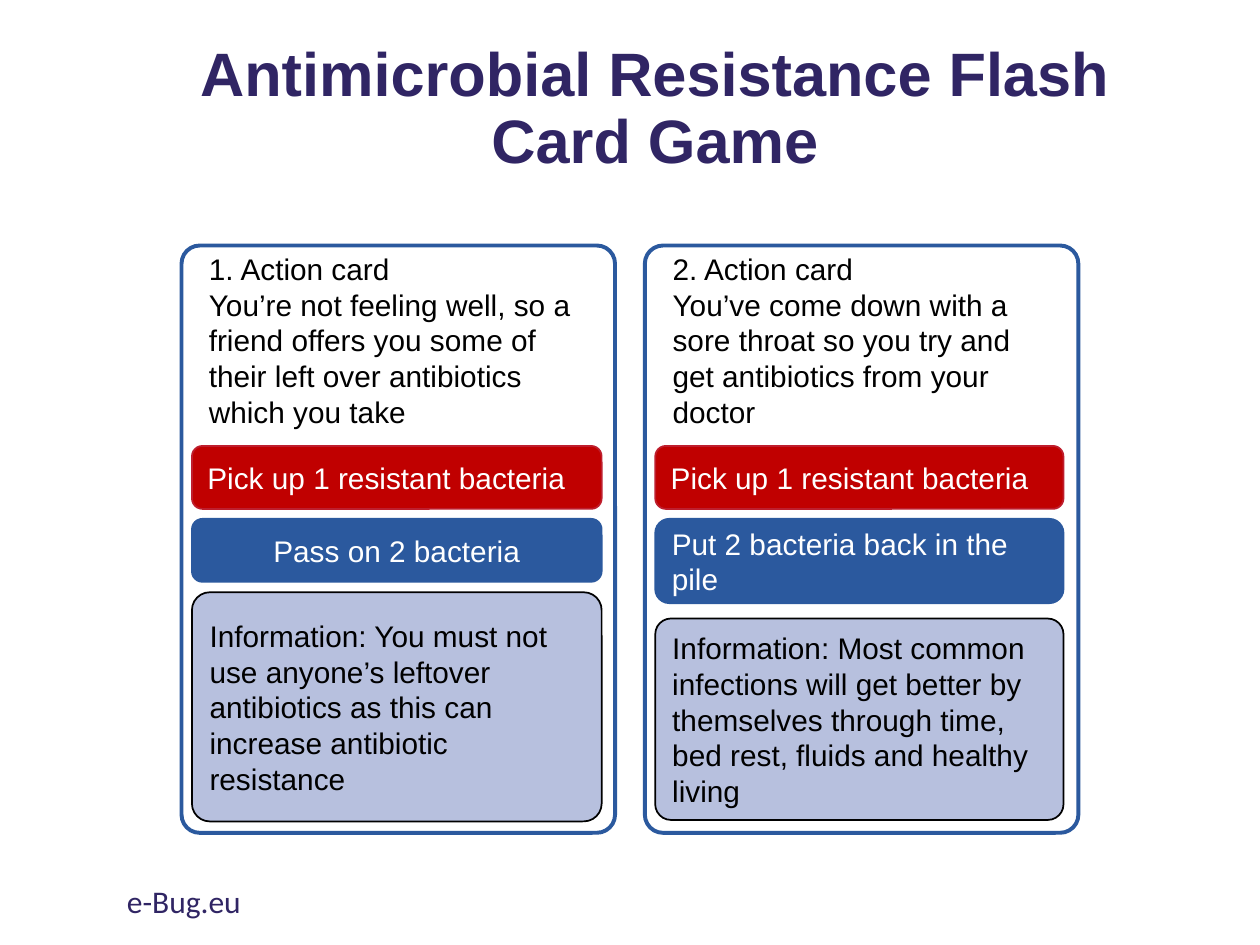
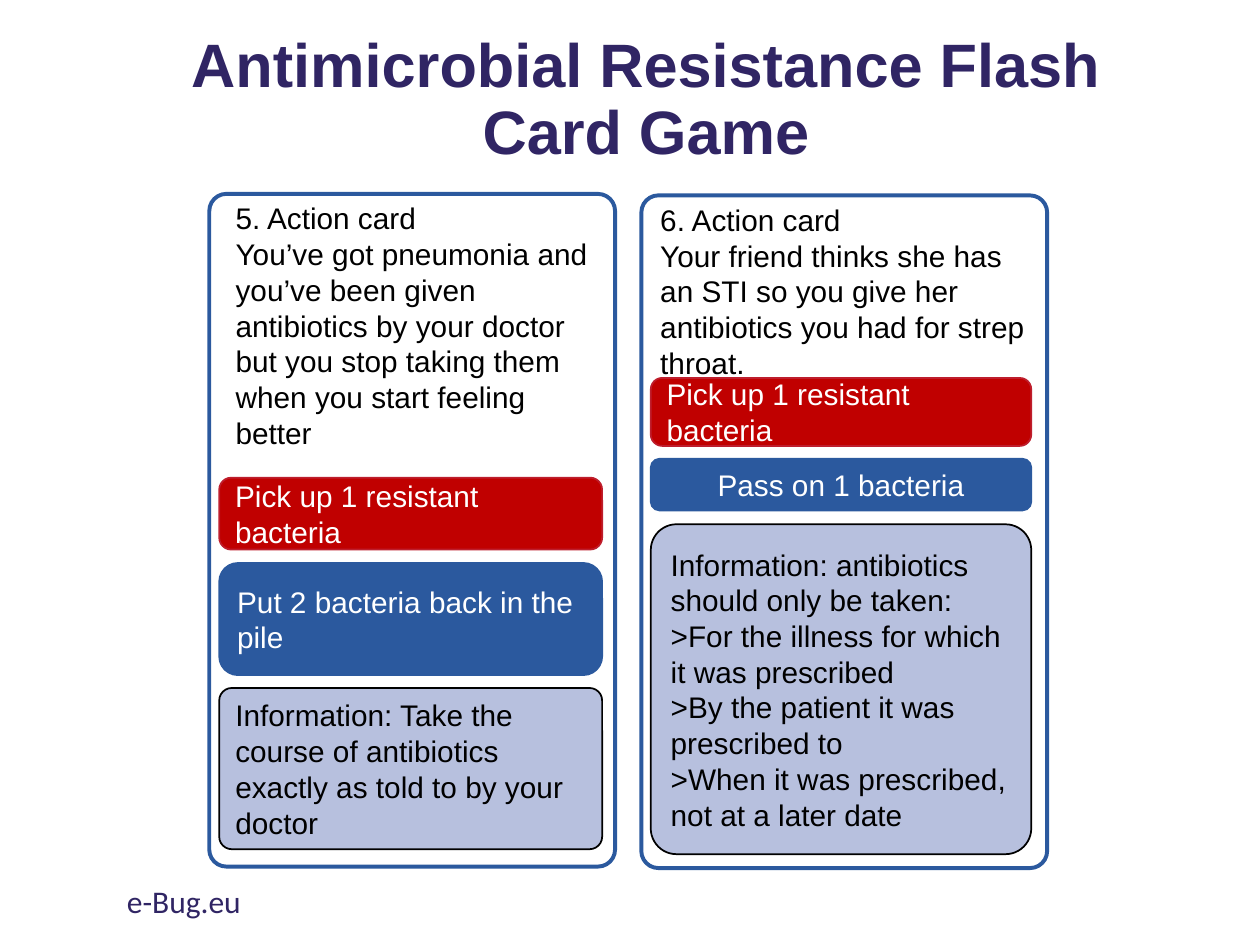
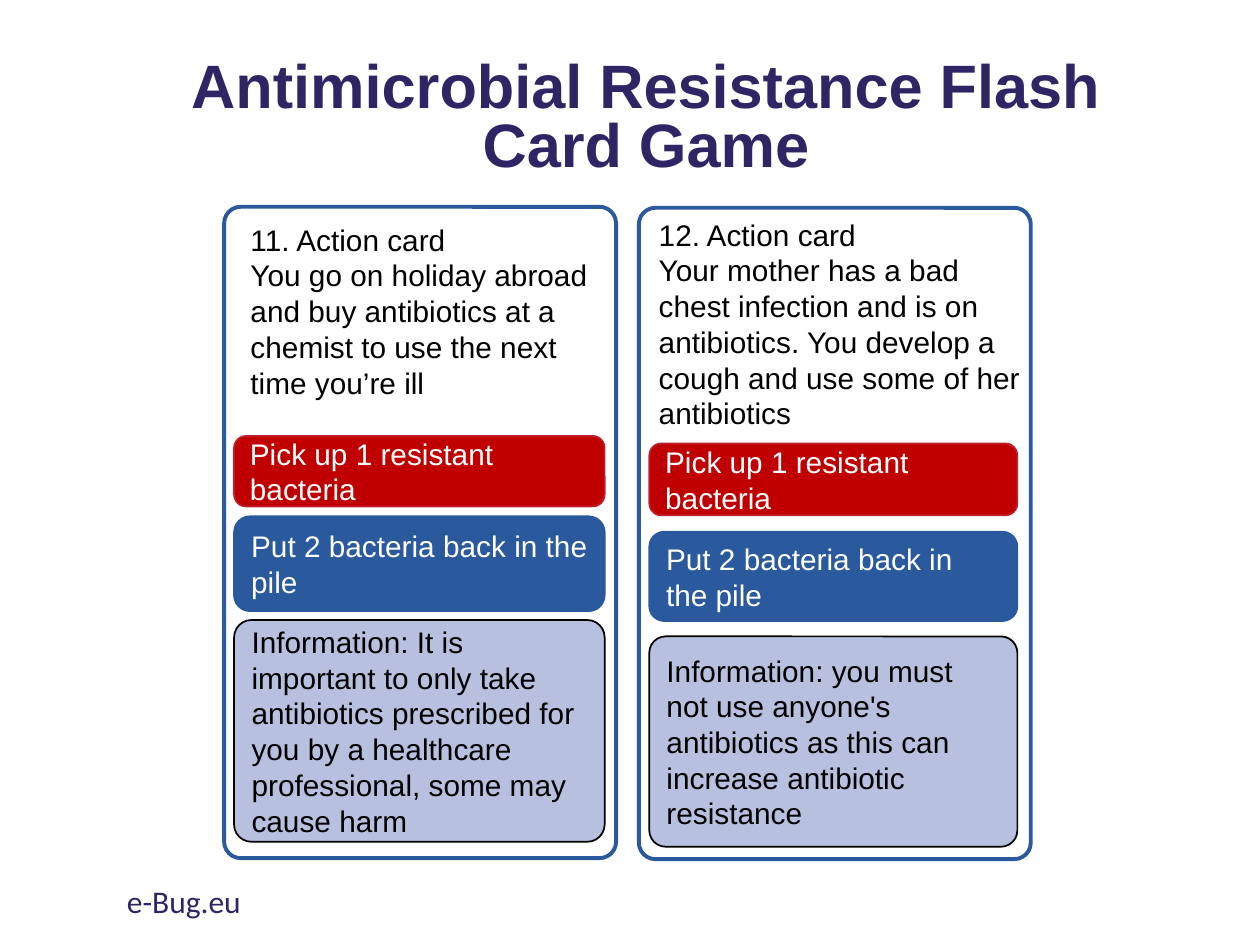
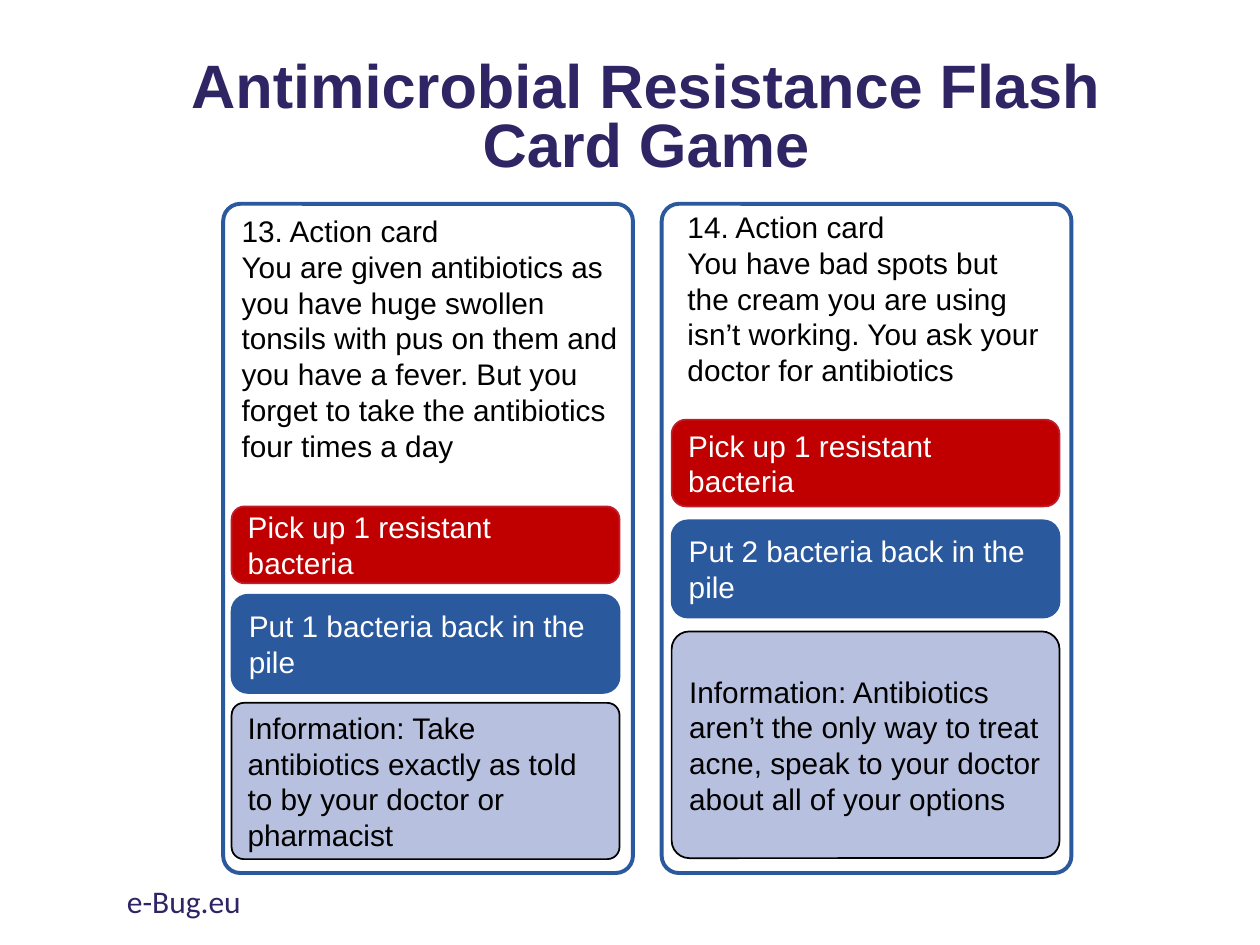
from dataclasses import dataclass

import pptx
import pptx.dml.color
import pptx.enum.shapes
import pptx.enum.text
import pptx.oxml
import pptx.oxml.ns
import pptx.util
from lxml import etree

Cm = pptx.util.Cm
Pt = pptx.util.Pt
RGBColor = pptx.dml.color.RGBColor
Align = pptx.enum.text.PP_ALIGN
Anchor = pptx.enum.text.MSO_ANCHOR
AutoSize = pptx.enum.text.MSO_AUTO_SIZE

INDIGO = RGBColor(0x30, 0x25, 0x64)
BLUE = RGBColor(0x2B, 0x59, 0x9E)
RED = RGBColor(0xC0, 0x00, 0x00)
RED_EDGE = RGBColor(0xBE, 0x1E, 0x2D)
LAVENDER = RGBColor(0xB7, 0xC0, 0xDE)
BLACK = RGBColor(0x00, 0x00, 0x00)
WHITE = RGBColor(0xFF, 0xFF, 0xFF)

TITLE = "Antimicrobial Resistance Flash Card Game"
FOOTER = "e-Bug.eu"
PICK_UP = "Pick up 1 resistant bacteria"
FRAME_CORNER = 0.042
INFO_CORNER = 0.078
BAND_CORNER = 0.167


@dataclass
class Card:
    """One flash card; all lengths are centimetres."""
    corner: tuple       # left, top of the frame
    prompt_box: tuple   # left, top, width, height
    band_span: tuple    # left, width shared by the three bands
    pick_up: tuple      # top, height of each band
    action: tuple
    info: tuple
    heading: str
    prompt: str
    action_text: str
    info_lines: tuple
    auto_numbered: bool = False


@dataclass
class CardSlide:
    title_box: tuple
    title_spacing: float
    card_size: tuple
    cards: tuple


SLIDES = (
    CardSlide((2.26, 0.38, 21.89, 3.68), 0.9, (8.74, 11.84), (
        Card((3.66, 4.95), (3.96, 4.93, 8.13, 3.89), (3.87, 8.26),
             (8.99, 1.27), (10.46, 1.27), (11.94, 4.62),
             "Action card",
             "You’re not feeling well, so a friend offers you some of their "
             "left over antibiotics which you take",
             "Pass on 2 bacteria",
             ("Information: You must not use anyone’s leftover antibiotics "
              "as this can increase antibiotic resistance",),
             auto_numbered=True),
        Card((13, 4.95), (13.31, 4.93, 8.13, 3.89), (13.21, 8.23),
             (8.99, 1.27), (10.46, 1.7), (12.47, 4.06),
             "2. Action card",
             "You’ve come down with a sore throat so you try and get "
             "antibiotics from your doctor",
             "Put 2 bacteria back in the pile",
             ("Information: Most common infections will get better by "
              "themselves through time, bed rest, fluids and healthy living",)),
    )),
    CardSlide((2.08, 0.2, 21.89, 3.68), 0.9, (8.18, 13.56), (
        Card((4.22, 3.91), (4.5, 3.91, 7.87, 5.69), (4.42, 7.72),
             (9.63, 1.45), (11.35, 2.26), (13.87, 3.25),
             "5. Action card",
             "You’ve got pneumonia and you’ve been given antibiotics by your "
             "doctor but you stop taking them when you start feeling better",
             "Put 2 bacteria back in the pile",
             ("Information: Take the course of antibiotics exactly as told "
              "to by your doctor",)),
        Card((12.93, 3.94), (13.06, 3.94, 8.13, 4.14), (13.12, 7.67),
             (7.62, 1.37), (9.25, 1.04), (10.57, 6.65),
             "6. Action card",
             "Your friend thinks she has an STI so you give her antibiotics "
             "you had for strep throat.",
             "Pass on 1 bacteria",
             ("Information: antibiotics should only be taken:",
              ">For the illness for which it was prescribed",
              ">By the patient it was prescribed to",
              ">When it was prescribed, not at a later date")),
    )),
    CardSlide((2.08, 0.97, 21.89, 2.9), 0.8, (7.9, 13.13), (
        Card((4.52, 4.17), (4.8, 4.34, 7.59, 3.89), (4.72, 7.47),
             (8.79, 1.42), (10.41, 1.91), (12.5, 4.47),
             "11. Action card",
             "You go on holiday abroad and buy antibiotics at a chemist to "
             "use the next time you’re ill",
             "Put 2 bacteria back in the pile",
             ("Information: It is important to only take antibiotics "
              "prescribed for you by a healthcare professional, some may "
              "cause harm",)),
        Card((12.88, 4.19), (13.03, 4.24, 7.85, 4.62), (13.09, 7.42),
             (8.94, 1.45), (10.72, 1.8), (12.83, 4.24),
             "12. Action card",
             "Your mother has a bad chest infection and is on antibiotics. "
             "You develop a cough and use some of her antibiotics",
             "Put 2 bacteria back in the pile",
             ("Information: you must not use anyone's antibiotics as this "
              "can increase antibiotic resistance",)),
    )),
    CardSlide((2.08, 0.97, 21.89, 2.9), 0.8, (8.26, 13.49), (
        Card((4.5, 4.11), (4.62, 4.17, 8.23, 5.33), (4.67, 7.82),
             (10.21, 1.55), (11.99, 1.98), (14.17, 3.15),
             "13. Action card",
             "You are given antibiotics as you have huge swollen tonsils "
             "with pus on them and you have a fever. But you forget to take "
             "the antibiotics four times a day",
             "Put 1 bacteria back in the pile",
             ("Information: Take antibiotics exactly as told to by your "
              "doctor or pharmacist",)),
        Card((13.34, 4.11), (13.61, 4.09, 7.7, 3.89), (13.54, 7.82),
             (8.46, 1.75), (10.49, 1.96), (12.73, 4.57),
             "14. Action card",
             "You have bad spots but the cream you are using isn’t working. "
             "You ask your doctor for antibiotics",
             "Put 2 bacteria back in the pile",
             ("Information: Antibiotics aren’t the only way to treat acne, "
              "speak to your doctor about all of your options",)),
    )),
)


def write_text(frame, lines, *, size=17, font="Arial", color=BLACK, bold=False,
               align=Align.LEFT, anchor=Anchor.TOP, spacing=None,
               auto_size=AutoSize.NONE, number_first=False):
    frame.word_wrap = True
    frame.auto_size = auto_size
    frame.vertical_anchor = anchor
    for index, line in enumerate(lines):
        paragraph = frame.paragraphs[0] if index == 0 else frame.add_paragraph()
        if number_first and index == 0:
            add_number(paragraph)
        paragraph.alignment = align
        if spacing:
            paragraph.line_spacing = spacing
        run = paragraph.add_run()
        run.text = line
        run.font.size = Pt(size)
        run.font.name = font
        run.font.bold = bold
        run.font.color.rgb = color


def add_number(paragraph):
    """Give the paragraph a hanging automatic number."""
    properties = paragraph._p.get_or_add_pPr()
    properties.set("marL", str(Cm(0.64)))
    properties.set("indent", str(-Cm(0.64)))
    number = etree.SubElement(properties, pptx.oxml.ns.qn("a:buAutoNum"))
    number.set("type", "arabicPeriod")


def add_text_box(slide, box, lines, **text_format):
    text_box = slide.shapes.add_textbox(*map(Cm, box))
    write_text(text_box.text_frame, lines, **text_format)


def add_rounded(slide, box, corner, edge, weight=1, fill=None):
    panel = slide.shapes.add_shape(
        pptx.enum.shapes.MSO_SHAPE.ROUNDED_RECTANGLE, *map(Cm, box))
    panel.shadow.inherit = False
    panel.adjustments[0] = corner
    panel.line.color.rgb = edge
    panel.line.width = Pt(weight)
    if fill is None:
        panel.fill.background()
    else:
        panel.fill.solid()
        panel.fill.fore_color.rgb = fill
    return panel


def add_band(slide, span, rows, lines, fill, edge, corner=BAND_CORNER,
             **text_format):
    (left, width), (top, height) = span, rows
    band = add_rounded(slide, (left, top, width, height), corner, edge,
                       fill=fill)
    write_text(band.text_frame, lines, anchor=Anchor.MIDDLE, **text_format)


def add_card(slide, card, size):
    add_rounded(slide, card.corner + size, FRAME_CORNER, BLUE, weight=2.25)
    add_text_box(slide, card.prompt_box, (card.heading, card.prompt),
                 auto_size=AutoSize.SHAPE_TO_FIT_TEXT,
                 number_first=card.auto_numbered)
    add_band(slide, card.band_span, card.pick_up, (PICK_UP,), RED, RED_EDGE,
             color=WHITE)
    passes_on = card.action_text.startswith("Pass")
    add_band(slide, card.band_span, card.action, (card.action_text,), BLUE,
             BLUE, color=WHITE, align=Align.CENTER if passes_on else Align.LEFT)
    add_band(slide, card.band_span, card.info, card.info_lines, LAVENDER,
             BLACK, corner=INFO_CORNER)


def set_title(slide, box, spacing):
    title = slide.shapes.title
    title.left, title.top, title.width, title.height = map(Cm, box)
    write_text(title.text_frame, (TITLE,), size=35, color=INDIGO, bold=True,
               align=Align.CENTER, anchor=Anchor.MIDDLE, spacing=spacing)


def main():
    deck = pptx.Presentation()
    deck.slide_width, deck.slide_height = Cm(25.4), Cm(19.05)
    title_only = deck.slide_layouts[5]
    for content in SLIDES:
        slide = deck.slides.add_slide(title_only)
        set_title(slide, content.title_box, content.title_spacing)
        for card in content.cards:
            add_card(slide, card, content.card_size)
        add_text_box(slide, (2.31, 17.65, 8.59, 1.02), (FOOTER,), size=18,
                     font="Calibri", color=INDIGO)
    deck.save("out.pptx")


if __name__ == "__main__":
    main()
